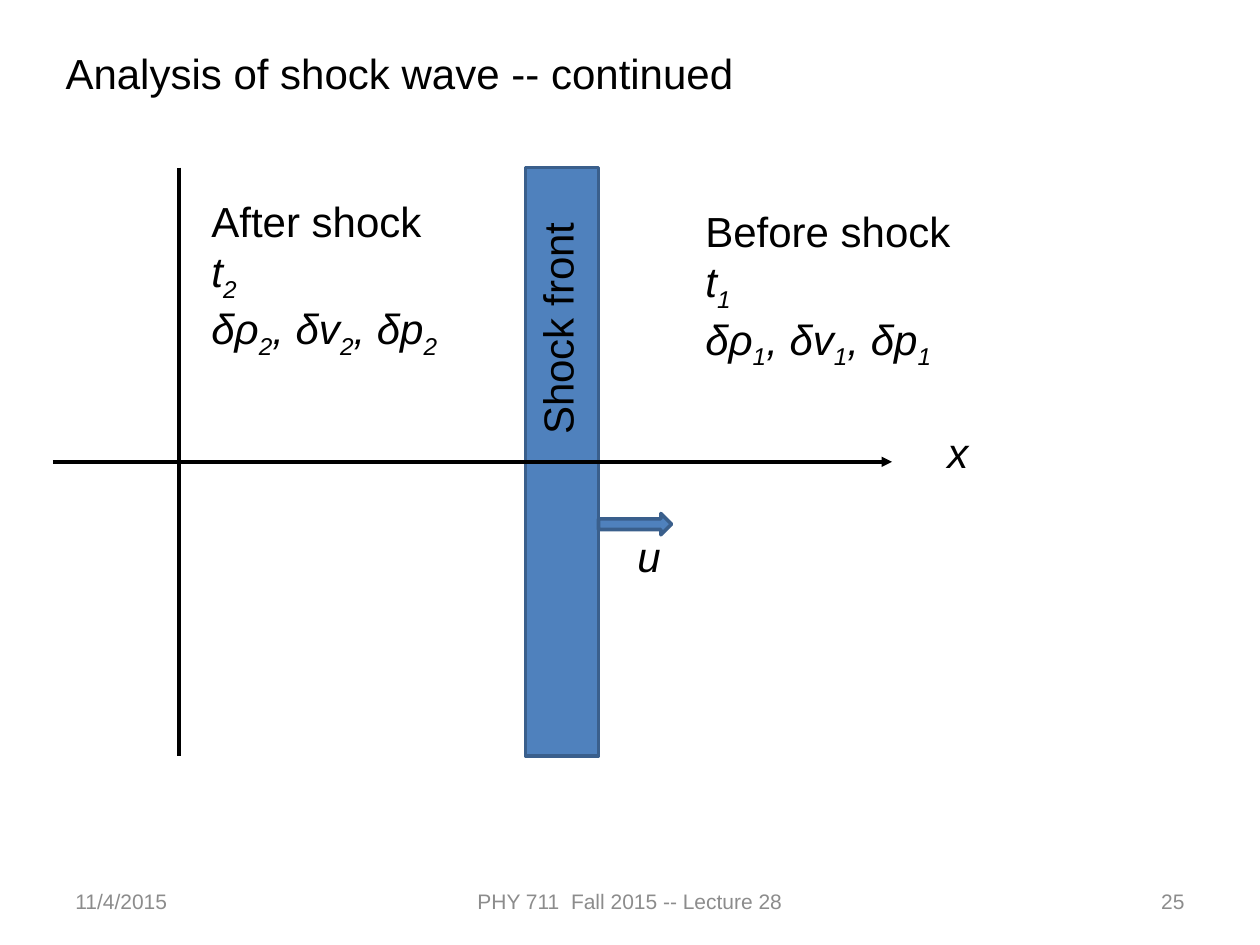
from lxml.etree import SubElement
from pptx import Presentation
from pptx.dml.color import RGBColor
from pptx.enum.shapes import MSO_CONNECTOR, MSO_SHAPE
from pptx.enum.text import MSO_ANCHOR, MSO_AUTO_SIZE, PP_ALIGN
from pptx.oxml.ns import qn
from pptx.util import Inches, Pt

BLACK = RGBColor(0x00, 0x00, 0x00)
GREY = RGBColor(0x8C, 0x8C, 0x8C)
BLUE = RGBColor(0x4F, 0x81, 0xBD)
EDGE = RGBColor(0x3A, 0x5F, 0x8C)

BODY = {"name": "Arial", "size": Pt(24), "color": BLACK}
MATH = {**BODY, "italic": True}
FOOT = {"name": "Arial", "size": Pt(12), "color": GREY}


def style(font, form):
    for key, value in form.items():
        if key == "color":
            font.color.rgb = value
        else:
            setattr(font, key, value)


def write(para, text, form):
    """Fill a paragraph; parts between underscores become subscripts."""
    for i, part in enumerate(text.split("_")):
        if part:
            run = para.add_run()
            run.text = part
            style(run.font, form)
            if i % 2:
                run._r.get_or_add_rPr().set("baseline", "-25000")


def label(slide, box, lines, align=PP_ALIGN.LEFT, anchor=MSO_ANCHOR.TOP):
    """Add a text box holding (text, format) lines."""
    shape = slide.shapes.add_textbox(*map(Inches, box))
    frame = shape.text_frame
    frame.word_wrap = True
    frame.vertical_anchor = anchor
    for i, (text, form) in enumerate(lines):
        para = frame.add_paragraph() if i else frame.paragraphs[0]
        para.alignment = align
        write(para, text, form)
    return frame


def block(slide, kind, box):
    shape = slide.shapes.add_shape(kind, *map(Inches, box))
    shape.shadow.inherit = False
    shape.fill.solid()
    shape.fill.fore_color.rgb = BLUE
    shape.line.color.rgb = EDGE
    shape.line.width = Pt(2)


def axis(slide, start, end, arrow=False):
    ends = map(Inches, (*start, *end))
    line = slide.shapes.add_connector(MSO_CONNECTOR.STRAIGHT, *ends)
    line.line.color.rgb = BLACK
    line.line.width = Pt(2)
    if arrow:
        SubElement(line.line._get_or_add_ln(), qn("a:tailEnd"), type="triangle")
    SubElement(line._element.spPr, qn("a:effectLst"))


def heading(slide, box, text):
    title = slide.shapes.title
    title.left, title.top, title.width, title.height = map(Inches, box)
    frame = title.text_frame
    frame.auto_size = MSO_AUTO_SIZE.NONE
    frame.vertical_anchor = MSO_ANCHOR.TOP
    para = frame.paragraphs[0]
    para.alignment = PP_ALIGN.LEFT
    write(para, text, BODY)


def state(slide, box, name, n):
    """Describe the gas on one side of the front."""
    label(slide, box, [
        (name, BODY),
        (f"t_{n}", MATH),
        (f"δρ_{n}_, δv_{n}_, δp_{n}", MATH),
    ])


def diagram(slide, box):
    left, top, width, height = box
    mid = top + height / 2
    front, thick = left + 3.75, 0.58
    edge = front + thick
    axis(slide, (left + 1, top), (left + 1, top + height))
    block(slide, MSO_SHAPE.RECTANGLE, (front, top, thick, height))
    axis(slide, (left, mid), (left + width, mid), arrow=True)
    label(slide, (left + 7, mid - 0.33, 0.92, 0.5), [("x", MATH)])

    side = label(slide, (front, top + 0.42, 0.61, 1.8), [("Shock front", BODY)])
    side.word_wrap = False
    side._txBody.bodyPr.set("vert", "vert270")

    state(slide, (left + 1.16, top + 0.17, 2.17, 1.31), "After shock", 2)
    state(slide, (edge + 0.75, top + 0.25, 2.17, 1.72), "Before shock", 1)
    block(slide, MSO_SHAPE.RIGHT_ARROW, (edge, mid + 0.41, thick, 0.17))
    label(slide, (edge + 0.21, mid + 0.5, 0.75, 0.5), [("u", MATH)])


def footer(slide, box):
    left, top, width, height = box
    side, centre = 2.33, 3.17
    parts = [
        (left, side, "11/4/2015", PP_ALIGN.LEFT),
        (left + (width - centre) / 2, centre,
         "PHY 711  Fall 2015 -- Lecture 28", PP_ALIGN.CENTER),
        (left + width - side, side, "25", PP_ALIGN.RIGHT),
    ]
    for x, wide, text, align in parts:
        label(slide, (x, top, wide, height), [(text, FOOT)], align,
              MSO_ANCHOR.MIDDLE)


def main():
    deck = Presentation()
    deck.slide_width, deck.slide_height = Inches(10), Inches(7.5)
    slide = deck.slides.add_slide(deck.slide_layouts[5])
    footer(slide, (0.5, 6.95, 9, 0.4))
    heading(slide, (0.42, 0.33, 7.92, 0.5), "Analysis of shock wave -- continued")
    diagram(slide, (0.42, 1.33, 6.66, 4.67))
    deck.save("out.pptx")


if __name__ == "__main__":
    main()
